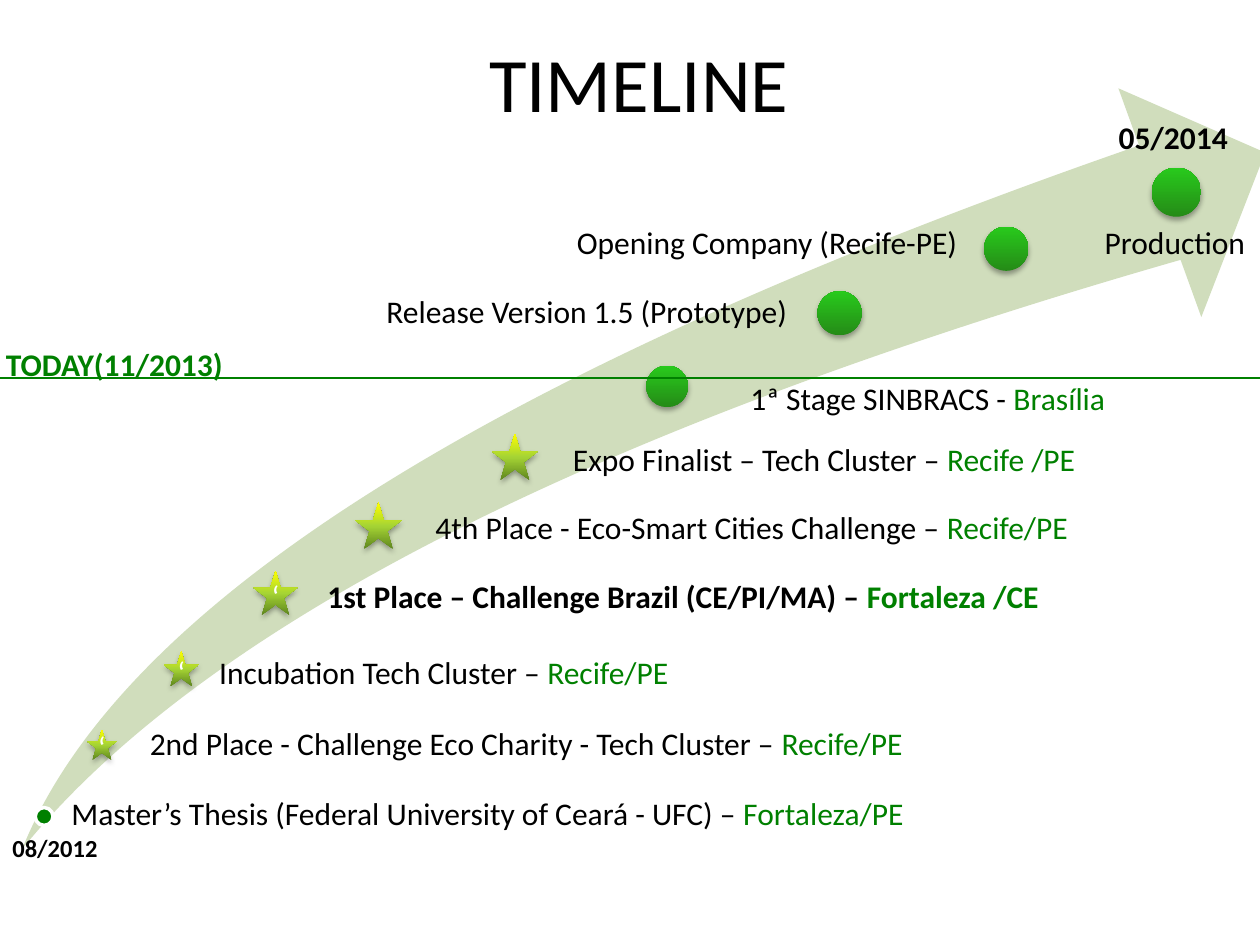
from lxml import etree
from pptx import Presentation
from pptx.dml.color import RGBColor
from pptx.enum import shapes, text
from pptx.oxml import ns
from pptx.util import Cm, Pt

HUES = {"ink": "000000", "green": "008000", "white": "FFFFFF", "swoosh": "D0DDBC"}
BALL = [(0, "258B17"), (100, "28CA1C")]
STAR = [(0, "5E861E"), (50, "A6D434"), (100, "FFFF00")]
KINDS = {
    "dot": (shapes.MSO_SHAPE.OVAL, None, ""),
    "ball": (shapes.MSO_SHAPE.OVAL, BALL, ""),
    "star": (shapes.MSO_SHAPE.STAR_5_POINT, STAR, ""),
    "tick": (shapes.MSO_SHAPE.STAR_5_POINT, STAR, "‘"),
}
ROW = 1.02

# Label left, top, width; marker kind, offset from the label, size; text, place
STEPS = [
    (1.19, 15.88, 17.4, "dot", -0.48, 0.4, 0.36,
     "Master’s Thesis (Federal University of Ceará - UFC) – ", "Fortaleza/PE"),
    (2.77, 14.48, 16.74, "tick", -1.02, 0.23, 0.61,
     "2nd Place - Challenge Eco Charity - Tech Cluster – ", "Recife/PE"),
    (4.17, 13.03, 9.75, "tick", -0.87, 0.1, 0.71,
     "Incubation Tech Cluster – ", "Recife/PE"),
    (6.35, 11.51, 14.99, "tick", -1.24, 0, 0.89,
     "1st Place – Challenge Brazil (CE/PI/MA) – ", "Fortaleza /CE"),
    (8.53, 10.11, 13.41, "star", -1.37, 0.02, 0.94,
     "4th Place - Eco-Smart Cities Challenge – ", "Recife/PE"),
    (11.3, 8.74, 11.18, "star", -1.39, 0, 0.94,
     "Expo Finalist – Tech Cluster – ", "Recife /PE"),
    (14.88, 7.52, 9.93, "ball", -1.85, -0.15, 0.84,
     "1ª Stage SINBRACS - ", "Brasília"),
    (7.54, 5.77, 8.69, "ball", 8.94, 0.1, 0.89,
     "Release Version 1.5 (Prototype)", ""),
    (11.38, 4.37, 8.28, "ball", 8.46, 0.2, 0.89,
     "Opening Company (Recife-PE)", ""),
    (22.02, 4.37, 3.38, "ball", 1.2, -0.99, 0.99, "Production", ""),
]
DATES = [
    ((0, 16.66, 2.26, 0.86), "08/2012", "ink", 14),
    ((-0.13, 6.83, 4.93, ROW), "TODAY(11/2013)", "green", 18),
    ((22.3, 2.26, 2.74, ROW), "05/2014", "ink", 18),
]


def rgb(name):
    return RGBColor.from_string(HUES[name])


def style(font, hue, size=18, bold=False):
    font.name, font.size, font.bold = "Calibri", Pt(size), bold
    font.color.rgb = rgb(hue)


def label(slide, box, parts, size=18, bold=False):
    """Write (words, hue) parts on one line in the box."""
    frame = slide.shapes.add_textbox(*map(Cm, box)).text_frame
    frame.word_wrap = False
    frame.auto_size = text.MSO_AUTO_SIZE.SHAPE_TO_FIT_TEXT
    for words, hue in parts:
        run = frame.paragraphs[0].add_run()
        run.text = words
        style(run.font, hue, size, bold)


def shade(shape, stops):
    """Fill upwards with the stops and drop a soft shadow."""
    shape.fill.gradient()
    shape.fill.gradient_angle = 90
    props = shape._element.spPr
    ramp = props.find(".//" + ns.qn("a:gsLst"))
    for stop in list(ramp):
        ramp.remove(stop)
    for pos, hue in stops:
        stop = etree.SubElement(ramp, ns.qn("a:gs"), pos=str(pos * 1000))
        etree.SubElement(stop, ns.qn("a:srgbClr"), val=hue)
    drop = etree.SubElement(
        props.find(ns.qn("a:effectLst")), ns.qn("a:outerShdw"),
        blurRad=str(Pt(3.1)), dist=str(Pt(1.8)), dir="5400000", rotWithShape="0")
    tint = etree.SubElement(drop, ns.qn("a:srgbClr"), val=HUES["ink"])
    etree.SubElement(tint, ns.qn("a:alpha"), val="35000")


def marker(slide, box, kind):
    form, stops, sign = KINDS[kind]
    shape = slide.shapes.add_shape(form, *map(Cm, box))
    shape.shadow.inherit = False
    if stops:
        shape.line.fill.background()
        shade(shape, stops)
    else:
        shape.fill.solid()
        shape.fill.fore_color.rgb = rgb("green")
        shape.line.color.rgb = rgb("white")
        shape.line.width = Pt(2)
    if sign:
        frame = shape.text_frame
        frame.text = sign
        frame.vertical_anchor = text.MSO_ANCHOR.MIDDLE
        frame.paragraphs[0].alignment = text.PP_ALIGN.CENTER
        style(frame.paragraphs[0].runs[0].font, "white")


def step(slide, box, kind, dx, dy, size, words, place):
    """Place a milestone's label in the box and its marker by offset."""
    parts = [(words, "ink")] + ([(place, "green")] if place else [])
    label(slide, box, parts, bold=words.startswith("1st"))
    marker(slide, (box[0] + dx, box[1] + dy, size, size), kind)


def swoosh(slide, box):
    shape = slide.shapes.add_shape(shapes.MSO_SHAPE.SWOOSH_ARROW, *map(Cm, box))
    shape.adjustments[0] = shape.adjustments[1] = 0.25
    shape.rotation = 346.5
    shape.shadow.inherit = False
    shape.fill.solid()
    shape.fill.fore_color.rgb = rgb("swoosh")
    shape.line.fill.background()


def title(slide, box):
    head = slide.shapes.title
    head.left, head.top, head.width, head.height = map(Cm, box)
    frame = head.text_frame
    frame.text = "TIMELINE"
    frame.vertical_anchor = text.MSO_ANCHOR.MIDDLE
    frame.paragraphs[0].alignment = text.PP_ALIGN.CENTER
    style(frame.paragraphs[0].runs[0].font, "ink", 44)


def today(slide, left, right, y):
    line = slide.shapes.add_connector(
        shapes.MSO_CONNECTOR.STRAIGHT, Cm(left), Cm(y), Cm(right), Cm(y))
    line.line.color.rgb = rgb("green")
    line.line.width = Pt(1.5)
    etree.SubElement(line._element.spPr, ns.qn("a:effectLst"))


def main():
    deck = Presentation()
    deck.slide_width, deck.slide_height = Cm(25.4), Cm(19.05)
    slide = deck.slides.add_slide(deck.slide_layouts[5])
    swoosh(slide, (-1.07, 4.27, 27.64, 9.75))
    title(slide, (3.76, 0.05, 18.24, 3.18))
    for left, top, width, *rest in STEPS:
        step(slide, (left, top, width, ROW), *rest)
    for box, words, hue, size in DATES:
        label(slide, box, [(words, hue)], size, True)
    today(slide, -0.51, 26.11, 7.62)
    deck.save("out.pptx")


if __name__ == "__main__":
    main()
